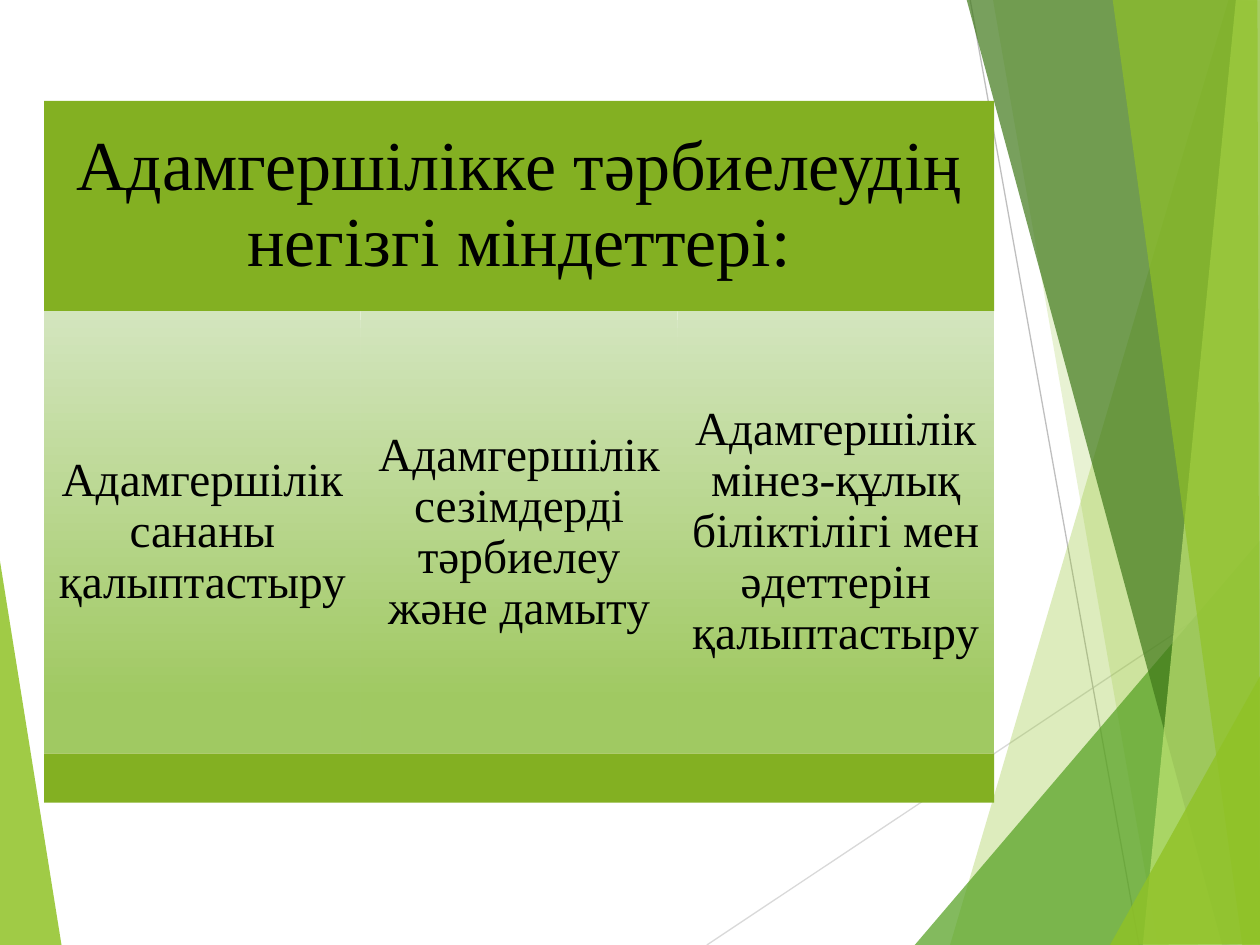
from lxml import etree
from pptx import Presentation
from pptx.dml.color import RGBColor
from pptx.enum.shapes import MSO_CONNECTOR, MSO_SHAPE
from pptx.enum.text import MSO_ANCHOR, MSO_AUTO_SIZE, PP_ALIGN
from pptx.oxml.ns import qn
from pptx.util import Inches, Pt

STRAIGHT = MSO_CONNECTOR.STRAIGHT
RECTANGLE = MSO_SHAPE.RECTANGLE
MIDDLE = MSO_ANCHOR.MIDDLE
NO_AUTOFIT = MSO_AUTO_SIZE.NONE
CENTER = PP_ALIGN.CENTER

LIME = RGBColor(0x90, 0xC2, 0x26)
PALE_LIME = RGBColor(0xC0, 0xE4, 0x74)
GREEN = RGBColor(0x54, 0xA0, 0x21)
DARK_GREEN = RGBColor(0x3F, 0x78, 0x19)
BAND_GREEN = RGBColor(0x83, 0xB0, 0x22)
COLUMN_TOP = RGBColor(0xD3, 0xE5, 0xBE)
COLUMN_BOTTOM = RGBColor(0xA0, 0xC9, 0x62)
LIGHT_GREY = RGBColor(0xD9, 0xD9, 0xD9)
GREY = RGBColor(0xBF, 0xBF, 0xBF)
BLACK = RGBColor(0, 0, 0)

FONT = "Times New Roman"
HEADING = "Адамгершілікке тәрбиелеудің негізгі міндеттері:"
TASKS = [
    "Адамгершілік сананы қалыптастыру",
    "Адамгершілік сезімдерді тәрбиелеу және дамыту",
    "Адамгершілік мінез-құлық біліктілігі мен әдеттерін қалыптастыру",
]

# Facets: colour, opacity in percent, corners in inches
LEFT_FACET = (LIME, 85, [(-0.01, 4.39), (0.49, 7.51), (-0.01, 7.5)])
RIGHT_FACETS = [
    (LIME, 30, [(9.75, 0), (7.54, 7.5), (10.02, 7.51), (10.01, 0.01)]),
    (LIME, 20, [(7.88, -0.01), (9.19, 7.5), (10.01, 7.5), (10.01, -0.01)]),
    (GREEN, 72, [(7.26, 7.5), (10, 4.29), (10.01, 7.5)]),
    (DARK_GREEN, 70, [(7.67, -0.01), (9.7, 7.5), (10.01, 7.49), (10.01, -0.01)]),
    (PALE_LIME, 70, [(9.81, -0.01), (9.07, 7.5), (10.01, 7.5), (10, -0.01)]),
    (LIME, 65, [(8.83, -0.01), (9.86, 7.5), (10, 7.5), (9.98, -0.01)]),
    (LIME, 80, [(8.81, 7.5), (10.01, 5.35), (10.01, 7.49)]),
]
RAYS = [
    (LIGHT_GREY, (5.61, 7.5), (10.01, 4.57)),
    (GREY, (7.7, 0), (9.04, 7.5)),
]


def add_facet(slide, color, opacity, corners):
    points = [(Inches(x), Inches(y)) for x, y in corners]
    builder = slide.shapes.build_freeform(*points[0])
    builder.add_line_segments(points[1:], close=True)
    facet = builder.convert_to_shape()
    facet.shadow.inherit = False
    facet.line.fill.background()
    facet.fill.solid()
    facet.fill.fore_color.rgb = color
    rgb = facet._element.spPr.find(qn("a:solidFill")).find(qn("a:srgbClr"))
    etree.SubElement(rgb, qn("a:alpha")).set("val", str(opacity * 1000))


def add_ray(slide, color, start, end):
    ray = slide.shapes.add_connector(STRAIGHT, *map(Inches, start + end))
    ray.line.color.rgb = color
    ray.line.width = Pt(0.75)
    etree.SubElement(ray._element.spPr, qn("a:effectLst"))


def add_backdrop(slide):
    add_facet(slide, *LEFT_FACET)
    for ray in RAYS:
        add_ray(slide, *ray)
    for facet in RIGHT_FACETS:
        add_facet(slide, *facet)


def write_text(shape, text, size, inset):
    frame = shape.text_frame
    frame.text = text
    frame_format = {"word_wrap": True, "auto_size": NO_AUTOFIT, "vertical_anchor": MIDDLE}
    for side in ("left", "top", "right", "bottom"):
        frame_format[f"margin_{side}"] = Inches(inset)
    paragraph = frame.paragraphs[0]
    font = paragraph.runs[0].font
    font.color.rgb = BLACK
    for target, values in (
        (frame, frame_format),
        (paragraph, {"alignment": CENTER, "line_spacing": 0.9}),
        (font, {"name": FONT, "size": Pt(size), "bold": False}),
    ):
        for name, value in values.items():
            setattr(target, name, value)


def add_block(slide, left, top, width, height):
    block = slide.shapes.add_shape(RECTANGLE, *map(Inches, (left, top, width, height)))
    block.shadow.inherit = False
    block.line.fill.background()
    return block


def fill_band(band):
    band.fill.solid()
    band.fill.fore_color.rgb = BAND_GREEN


def place_heading(slide, left, top, width, height):
    title = slide.shapes.title
    box = {"left": left, "top": top, "width": width, "height": height}
    for name, value in box.items():
        setattr(title, name, Inches(value))
    fill_band(title)
    write_text(title, HEADING, 40, 0.17)
    # Bring the heading in front of the backdrop
    slide.shapes._spTree.append(title._element)


def add_tasks(slide, left, top, width, height):
    column_width = width / len(TASKS)
    for index, task in enumerate(TASKS):
        column = add_block(slide, left + index * column_width, top, column_width, height)
        column.fill.gradient()
        column.fill.gradient_angle = 270
        stops = ((0, COLUMN_TOP), (0.88, COLUMN_BOTTOM))
        for stop, (position, color) in zip(column.fill.gradient_stops, stops):
            stop.position = position
            stop.color.rgb = color
        write_text(column, task, 27, 0.11)


def main():
    prs = Presentation()
    prs.slide_width, prs.slide_height = Inches(10), Inches(7.5)
    slide = prs.slides.add_slide(prs.slide_layouts[5])
    add_backdrop(slide)

    # Heading, task columns and closing band stacked without gaps
    left, top, width = 0.35, 0.8, 7.54
    heading_height, tasks_height, footer_height = 1.67, 3.51, 0.39
    tasks_top = top + heading_height
    place_heading(slide, left, top, width, heading_height)
    add_tasks(slide, left, tasks_top, width, tasks_height)
    fill_band(add_block(slide, left, tasks_top + tasks_height, width, footer_height))

    prs.save("out.pptx")


if __name__ == "__main__":
    main()
